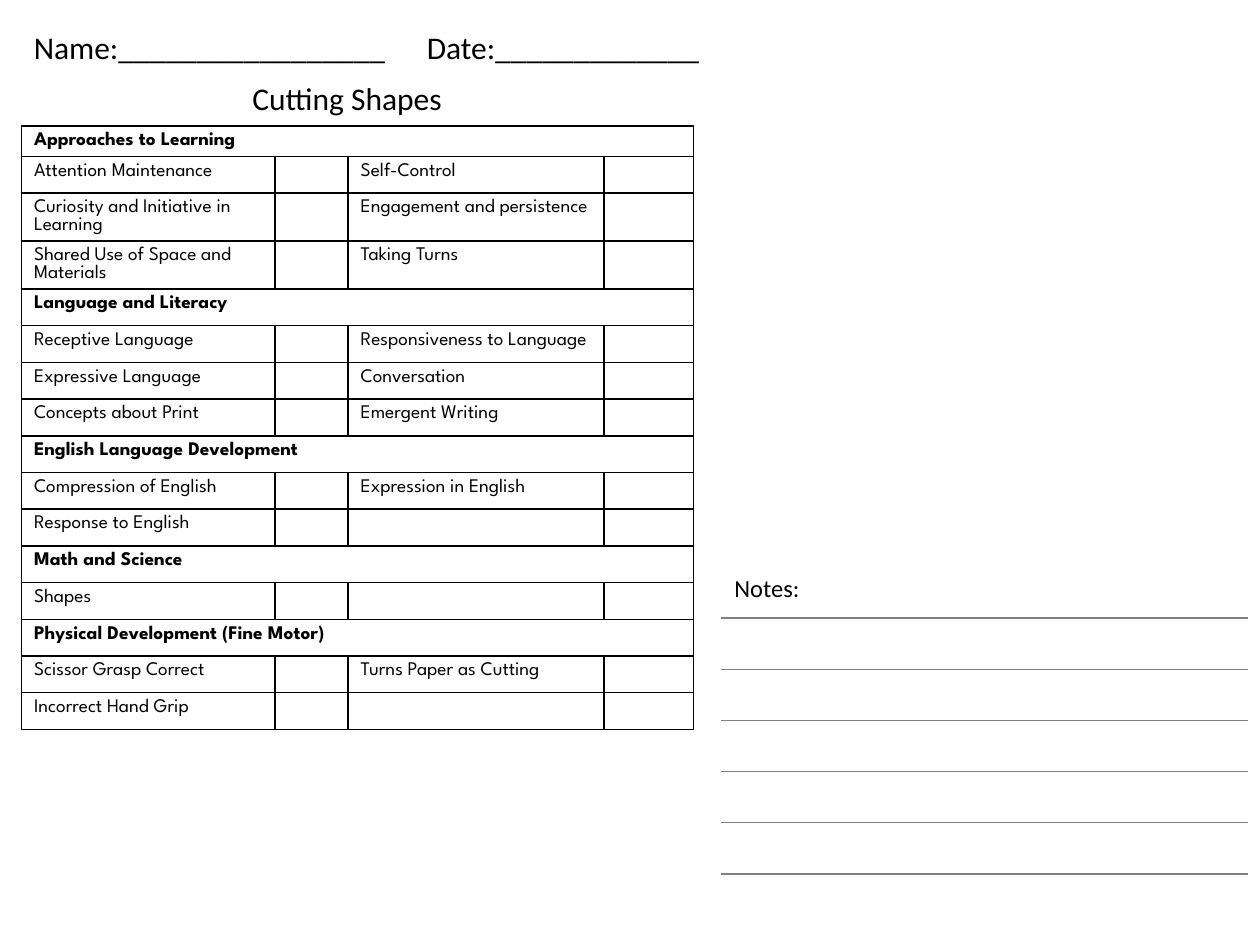
import pptx
import pptx.util
import pptx.dml.color
import pptx.enum.text
import pptx.oxml
import pptx.oxml.ns
from lxml import etree

Pt = pptx.util.Pt
qn = pptx.oxml.ns.qn

BLACK, WHITE, GRAY = "000000", "FFFFFF", "808080"
LEFT = 12.24
NOTES_LEFT, NOTES_TOP = 412.56, 324

# Each section: heading, then pairs of skills
SECTIONS = [
    ("Approaches to Learning", [
        ("Attention Maintenance", "Self-Control"),
        ("Curiosity and Initiative in Learning", "Engagement and persistence"),
        ("Shared Use of Space and Materials", "Taking Turns")]),
    ("Language and Literacy", [
        ("Receptive Language", "Responsiveness to Language"),
        ("Expressive Language", "Conversation"),
        ("Concepts about Print", "Emergent Writing")]),
    ("English Language Development", [
        ("Compression of English", "Expression in English"),
        ("Response to English", "")]),
    ("Math and Science", [("Shapes", "")]),
    ("Physical Development (Fine Motor)", [
        ("Scissor Grasp Correct", "Turns Paper as Cutting"),
        ("Incorrect Hand Grip", "")]),
]


def color(hex_text):
    return pptx.dml.color.RGBColor.from_string(hex_text)


def write(tf, text, size=18, font="Calibri", bold=False, align=None):
    """Put formatted text in a frame; an empty one keeps just its size."""
    p = tf.paragraphs[0]
    p.alignment = align
    if not text:
        etree.SubElement(p._p, qn("a:endParaRPr"), sz=str(size * 100))
        return p
    r = p.add_run()
    r.text = text
    r.font.size, r.font.name, r.font.bold = Pt(size), font, bold
    r.font.color.rgb = color(BLACK)
    return p


def add_text(s, text, left, top, width, height, **fmt):
    tf = s.shapes.add_textbox(Pt(left), Pt(top), Pt(width), Pt(height)).text_frame
    tf.word_wrap = True
    return write(tf, text, **fmt)


def style_cell(cell, left=BLACK, right=BLACK, top=BLACK, bottom=BLACK):
    """White cell with 1 pt borders."""
    tc_pr = cell._tc.get_or_add_tcPr()
    for side, rgb in zip("LRTB", (left, right, top, bottom)):
        ln = etree.SubElement(tc_pr, qn(f"a:ln{side}"), w=str(Pt(1)))
        fill = etree.SubElement(ln, qn("a:solidFill"))
        etree.SubElement(fill, qn("a:srgbClr"), val=rgb)
    cell.fill.solid()
    cell.fill.fore_color.rgb = color(WHITE)


def add_table(s, left, top, widths, heights):
    table = s.shapes.add_table(len(heights), len(widths), Pt(left), Pt(top),
                               Pt(sum(widths)), Pt(sum(heights))).table
    table.first_row = table.horz_banding = False
    for column, width in zip(table.columns, widths):
        column.width = Pt(width)
    for row, height in zip(table.rows, heights):
        row.height = Pt(height)
    return table


def add_title(s, text):
    sp = s.shapes.title
    sp.left, sp.top, sp.width, sp.height = Pt(LEFT), Pt(41.76), Pt(372.24), Pt(29)
    tf = sp.text_frame
    tf.auto_size = pptx.enum.text.MSO_AUTO_SIZE.NONE
    tf.vertical_anchor = pptx.enum.text.MSO_ANCHOR.TOP
    write(tf, text, align=pptx.enum.text.PP_ALIGN.CENTER)


def add_checklist(s):
    rows = []
    for heading, skills in SECTIONS:
        rows.append((heading,))
        rows += [(first, "", second, "") for first, second in skills]
    heights = [12] + [21] * (len(rows) - 1)
    table = add_table(s, LEFT, 72, [144.9, 41.8, 146.3, 51], heights)
    for i, row in enumerate(rows):
        is_heading = len(row) == 1
        texts = row + ("",) * (4 - len(row))
        for j, text in enumerate(texts):
            cell = table.cell(i, j)
            style_cell(cell)
            write(cell.text_frame, text, size=11, font="League Spartan",
                  bold=is_heading)
        if is_heading:
            table.cell(i, 0).merge(table.cell(i, 3))


def add_notes(s):
    count = 7
    table = add_table(s, NOTES_LEFT, NOTES_TOP, [300.24], [29.25] * count)
    for i in range(count):
        style_cell(table.cell(i, 0), left=WHITE, right=WHITE,
                   top=GRAY if i else WHITE,
                   bottom=GRAY if i < count - 1 else WHITE)
    add_text(s, "Notes:", NOTES_LEFT, NOTES_TOP, 60, 24.2, size=14)


def add_name_line(s):
    p = add_text(s, "Name:" + "_" * 17 + "\tDate:" + "_" * 13,
                 LEFT, LEFT, 401, 29)
    # Tab stop where the date starts
    tabs = etree.SubElement(p._p.get_or_add_pPr(), qn("a:tabLst"))
    etree.SubElement(tabs, qn("a:tab"), pos=str(Pt(224.6)), algn="l")


def main():
    prs = pptx.Presentation()
    prs.slide_width, prs.slide_height = Pt(720), Pt(540)
    s = prs.slides.add_slide(prs.slide_layouts[5])
    add_title(s, "Cutting Shapes")
    add_checklist(s)
    add_name_line(s)
    add_notes(s)
    prs.save("out.pptx")


if __name__ == "__main__":
    main()
